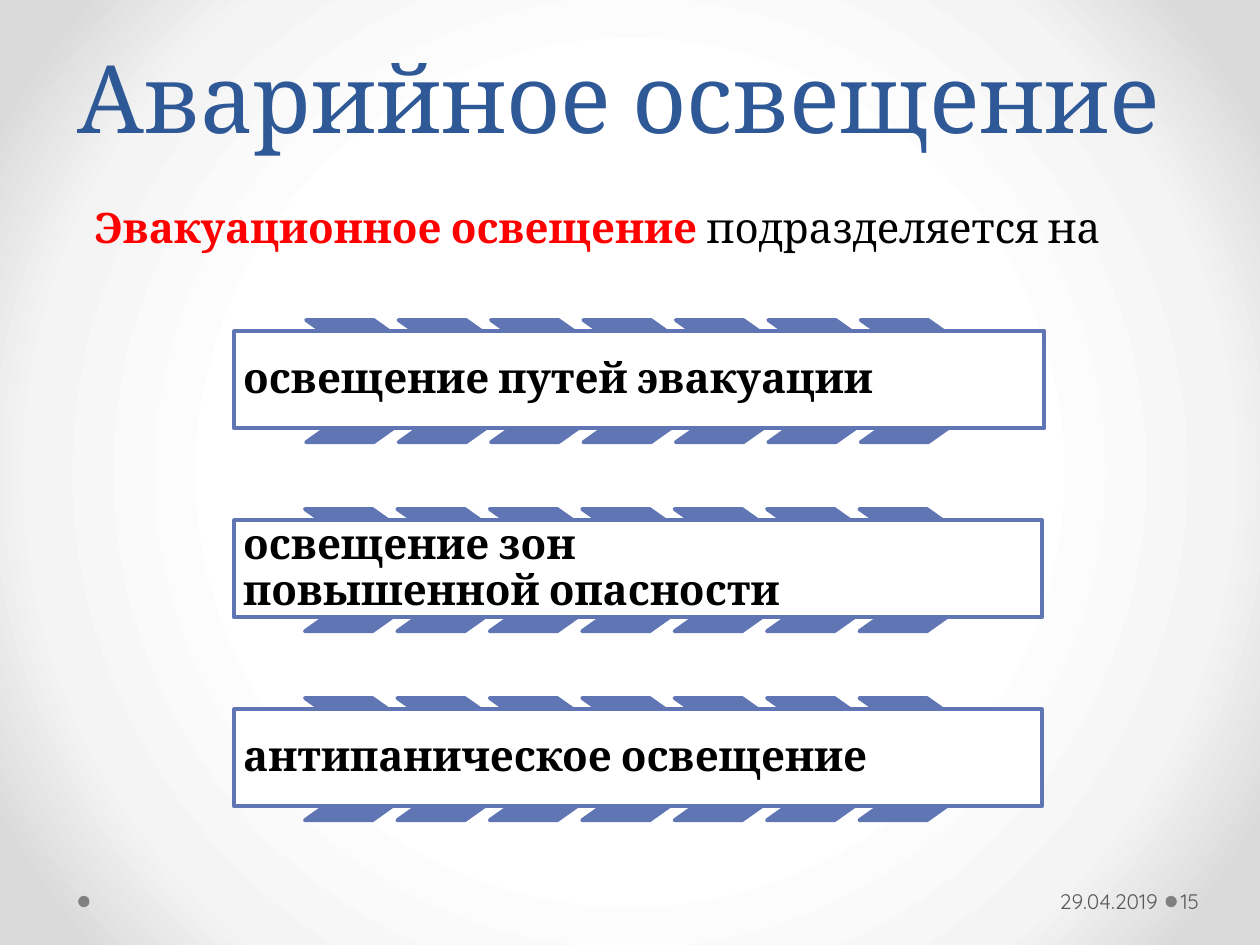
import pptx
import pptx.dml.color
import pptx.enum.shapes
import pptx.enum.text
import pptx.oxml
import pptx.oxml.ns
import pptx.util
from pptx.util import Inches

COLORS = {
    "title": "2F5897", "accent": "6076B4", "key": "FF0000", "text": "000000",
    "footer": "595959", "dot": "808080", "white": "FFFFFF",
}
BACKGROUND_STOPS = [(50, "FFFFFF"), (76, "F4F4F4"), (92, "DADADA")]
SERIF, SANS = "Cambria", "Quicksand"
SHAPE = pptx.enum.shapes.MSO_SHAPE
ANCHOR = pptx.enum.text.MSO_ANCHOR
ALIGN = pptx.enum.text.PP_ALIGN

# text, left of the first chevron, top of the chevrons, width of the panel
ROWS = [
    ("освещение путей эвакуации", 2.43, 2.54, 6.43),
    ("освещение зон \nповышенной опасности", 2.42, 4.04, 6.41),
    ("антипаническое освещение", 2.42, 5.54, 6.41),
]
CHEVRONS, CHEVRON_STEP = 7, 0.7335


def rgb(name):
    return pptx.dml.color.RGBColor.from_string(COLORS[name])


def set_background(s):
    """Fill the background with a gradient that spreads from the centre."""
    s.background.fill.gradient()
    grad = s.element.find(".//" + pptx.oxml.ns.qn("a:gradFill"))
    stops = "".join(
        f'<a:gs pos="{pos * 1000}"><a:srgbClr val="{color}"/></a:gs>'
        for pos, color in BACKGROUND_STOPS)
    radial = pptx.oxml.parse_xml(
        f'<a:gradFill {pptx.oxml.ns.nsdecls("a")} rotWithShape="1">'
        f'<a:gsLst>{stops}</a:gsLst><a:path path="circle">'
        '<a:fillToRect l="50000" t="50000" r="50000" b="50000"/>'
        '</a:path></a:gradFill>')
    grad.getparent().replace(grad, radial)


def add_shape(s, kind, box, fill, line=None):
    sp = s.shapes.add_shape(kind, *map(Inches, box))
    sp.shadow.inherit = False
    sp.fill.solid()
    sp.fill.fore_color.rgb = rgb(fill)
    if line:
        sp.line.color.rgb = rgb(line)
        sp.line.width = pptx.util.Pt(2.25)
    else:
        sp.line.fill.background()
    return sp


def set_frame(sp, anchor, insets=(0.1, 0.05, 0.1, 0.05), align=ALIGN.LEFT):
    """Prepare the text frame and return its first paragraph."""
    tf = sp.text_frame
    tf.word_wrap = True
    tf.vertical_anchor = anchor
    (tf.margin_left, tf.margin_top,
     tf.margin_right, tf.margin_bottom) = map(Inches, insets)
    p = tf.paragraphs[0]
    p.alignment = align
    return p


def add_text_box(s, box, *frame):
    return set_frame(s.shapes.add_textbox(*map(Inches, box)), *frame)


def add_run(p, text, size, color, font=SERIF, bold=False):
    r = p.add_run()
    r.text = text
    r.font.name = font
    r.font.size = pptx.util.Pt(size)
    r.font.bold = bold
    r.font.color.rgb = rgb(color)


def add_row(s, text, left, top, width):
    """Add a run of chevrons with a text panel across it."""
    for i in range(CHEVRONS):
        box = (left + i * CHEVRON_STEP, top, 1.22, 0.97)
        sp = add_shape(s, SHAPE.CHEVRON, box, "accent", "accent")
        sp.adjustments[0] = 0.706
    panel = add_shape(s, SHAPE.RECTANGLE, (1.86, top + 0.09, width, 0.77),
                      "white", "accent")
    p = set_frame(panel, ANCHOR.MIDDLE, (0.07,) * 4)
    p.line_spacing = 0.9
    for i, line in enumerate(text.split("\n")):
        if i:
            p.add_line_break()
        add_run(p, line, 24, "text", bold=True)


def add_footer(s):
    for left in (9.25, 0.62):
        add_shape(s, SHAPE.OVAL, (left, 7.11, 0.09, 0.09), "dot")
    p = add_text_box(s, (6.96, 6.95, 2.28, 0.4), ANCHOR.MIDDLE,
                     (0.1, 0.05, 0.05, 0.05), ALIGN.RIGHT)
    add_run(p, "29.04.2019", 12, "footer", SANS)
    p = add_text_box(s, (9.34, 6.95, 0.61, 0.4), ANCHOR.MIDDLE,
                     (0.03, 0.05, 0.05, 0.05))
    add_run(p, "15", 12, "footer", SANS)


def main():
    prs = pptx.Presentation()
    prs.slide_width, prs.slide_height = Inches(10), Inches(7.5)
    s = prs.slides.add_slide(prs.slide_layouts[6])
    set_background(s)
    add_footer(s)

    p = add_text_box(s, (0.5, 0.03, 9, 1.23), ANCHOR.BOTTOM,
                     (0.1, 0.05, 0.1, 0.05), ALIGN.CENTER)
    p.line_spacing = pptx.util.Pt(58)
    add_run(p, "Аварийное освещение ", 54, "title")

    p = add_text_box(s, (0.65, 1.55, 9, 0.51), ANCHOR.TOP)
    add_run(p, "Эвакуационное освещение ", 24, "key", bold=True)
    add_run(p, "подразделяется на", 24, "text")

    for row in ROWS:
        add_row(s, *row)
    prs.save("out.pptx")


if __name__ == "__main__":
    main()
